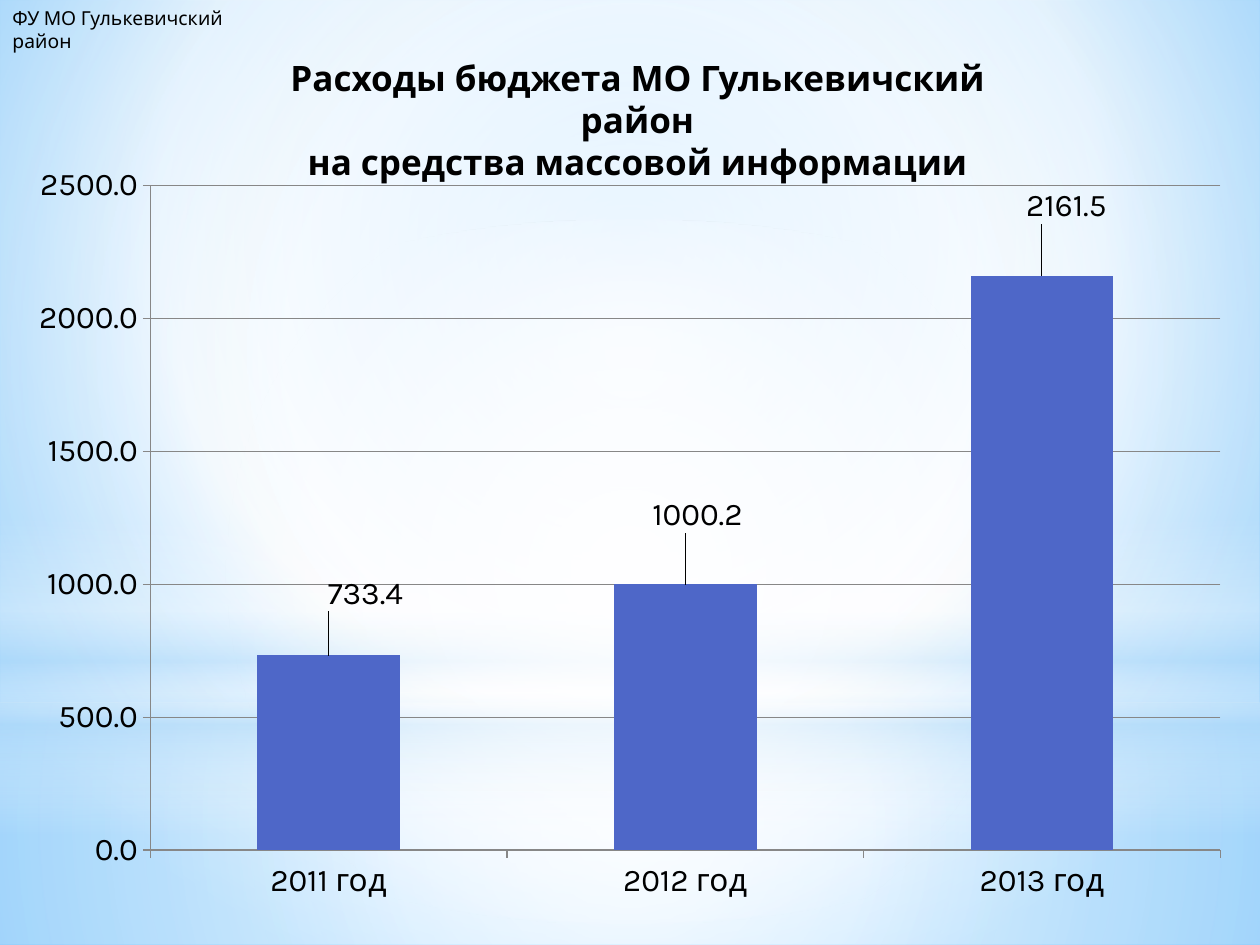
from lxml.etree import SubElement as Sub
from pptx import Presentation
from pptx.chart.data import CategoryChartData as Data
from pptx.dml.color import RGBColor as Rgb
from pptx.enum.chart import XL_CHART_TYPE as Kind, XL_LABEL_POSITION as Spot, XL_TICK_MARK as Tick
from pptx.enum.shapes import MSO_SHAPE as Form
from pptx.enum.text import MSO_ANCHOR as Anchor, MSO_AUTO_SIZE as Auto, PP_ALIGN as Align
from pptx.oxml.ns import qn
from pptx.util import Emu, Pt

PX = 914400 / 126
FONT = "Karla"
COLORS = {"text": "000000", "bar": "4E67C8", "line": "878787", "white": "FFFFFF",
          "pale": "B4DCFA", "sky": "9ED5FF", "blue": "5BB9FF"}
MID = (50, 50, 50, 50)


def px(*nums):
    """Turn pixel lengths into EMU."""
    return [Emu(round(n * PX)) for n in nums]


def tint(name):
    """Give a named colour."""
    return Rgb.from_string(COLORS[name])


def style(font, size, bold=False):
    """Format a font in the text colour."""
    font.name, font.size, font.bold = FONT, Pt(size), bold
    font.color.rgb = tint("text")


def blend(root, fill, stops, focus=None):
    """Fill with stops of (place, colour, opacity), round a focus or downwards."""
    fill.gradient()
    grad = root.xpath(".//a:gradFill")[0]
    grad.clear()
    group = Sub(grad, qn("a:gsLst"))
    for place, name, alpha in stops:
        stop = Sub(group, qn("a:gs"), pos=str(place * 1000))
        color = Sub(stop, qn("a:srgbClr"), val=COLORS[name])
        if alpha < 100:
            Sub(color, qn("a:alpha"), val=str(alpha * 1000))
    if focus:
        way = Sub(grad, qn("a:path"), {"path": "circle"})
        Sub(way, qn("a:fillToRect"), {k: str(v * 1000) for k, v in zip("ltrb", focus)})
    else:
        Sub(grad, qn("a:lin"), ang="5400000", scaled="0")


def glow(slide, form, box, stops, focus=MID):
    """Add a translucent gradient shape."""
    shape = slide.shapes.add_shape(form, *px(*box))
    shape.shadow.inherit = False
    shape.line.fill.background()
    blend(shape._element, shape.fill, stops, focus)


def write(shape, box, text, size, bold=False, align=Align.LEFT):
    """Place a shape and write formatted text in it."""
    shape.left, shape.top, shape.width, shape.height = px(*box)
    frame = shape.text_frame
    frame.text = text
    frame.word_wrap, frame.auto_size = True, Auto.NONE
    frame.vertical_anchor = Anchor.TOP
    for para in frame.paragraphs:
        para.alignment = align
        style(para.font, size, bold)


def place(root, index, **sizes):
    """Insert a manual chart layout."""
    for old in root.findall(qn("c:layout")):
        root.remove(old)
    layout = root.makeelement(qn("c:layout"), {})
    root.insert(index, layout)
    manual = Sub(layout, qn("c:manualLayout"))
    for key, val in sizes.items():
        Sub(manual, qn("c:" + key), val=str(val))


def graph(slide, box, cats, vals, shifts):
    """Add the column chart with shifted value labels."""
    data = Data(number_format="0.0")
    data.categories = cats
    data.add_series("Series 1", vals)
    chart = slide.shapes.add_chart(Kind.COLUMN_CLUSTERED, *px(*box), data).chart
    chart.has_legend = chart.has_title = False
    style(chart.font, 18)
    plot = chart.plots[0]
    plot.gap_width, plot.vary_by_categories = 150, False
    bars = plot.series[0]
    bars.format.fill.solid()
    bars.format.fill.fore_color.rgb = tint("bar")
    labels = bars.data_labels
    labels.show_value = True
    labels.number_format, labels.number_format_is_linked = "0.0", False
    for i, (x, y) in enumerate(shifts):
        label = bars.points[i].data_label
        style(label.font, 18)
        label.position = Spot.OUTSIDE_END
        place(bars._element.xpath(".//c:dLbl")[i], 1, x=x, y=y)
    axis = chart.value_axis
    axis.minimum_scale, axis.maximum_scale, axis.major_unit = 0, 2500, 500
    axis.has_major_gridlines = True
    axis.tick_labels.number_format = "0.0"
    axis.tick_labels.number_format_is_linked = False
    for side in (axis, chart.category_axis):
        side.major_tick_mark = Tick.OUTSIDE
    for part in (axis, chart.category_axis, axis.major_gridlines):
        part.format.line.color.rgb = tint("line")
        part.format.line.width = Pt(0.75)
    place(chart._chartSpace.xpath(".//c:plotArea")[0], 0, layoutTarget="inner",
          xMode="edge", yMode="edge", x=0.11, y=0.04, w=0.87, h=0.87)


def main():
    """Build the slide."""
    deck = Presentation()
    deck.slide_width, deck.slide_height = px(1260, 945)
    slide = deck.slides.add_slide(deck.slide_layouts[5])
    blend(slide._element, slide.background.fill,
          [(0, "sky", 100), (60, "white", 100), (100, "blue", 100)], (20, 10, 20, 60))
    glow(slide, Form.RECTANGLE, (0, 703, 1260, 242),
         [(0, "white", 91), (37, "white", 76), (100, "pale", 79)])
    glow(slide, Form.RECTANGLE, (0, 0, 1260, 703),
         [(0, "white", 89), (48, "white", 62), (100, "pale", 79)])
    glow(slide, Form.RECTANGLE, (0, 519, 1260, 315),
         [(0, "white", 0), (29, "white", 30), (45, "pale", 40),
          (55, "white", 26), (65, "pale", 60), (100, "white", 0)], None)
    glow(slide, Form.OVAL, (0, 220, 1260, 703), [(0, "white", 100), (56, "white", 0)])
    graph(slide, (15, 155, 1230, 764), ["2011 год", "2012 год", "2013 год"],
          [733.4, 1000.2, 2161.5], [(0.03, -0.05), (0.01, -0.06), (0.02, -0.06)])
    title = slide.shapes.title
    slide.shapes._spTree.append(title._element)
    write(title, (247, 50, 781, 97),
          "Расходы бюджета МО Гулькевичский район\nна средства массовой информации",
          20, True, Align.CENTER)
    note = slide.shapes.add_textbox(*px(0, 0, 284, 37))
    write(note, (0, 0, 284, 37), "ФУ МО Гулькевичский район", 11)
    deck.save("out.pptx")


if __name__ == "__main__":
    main()
